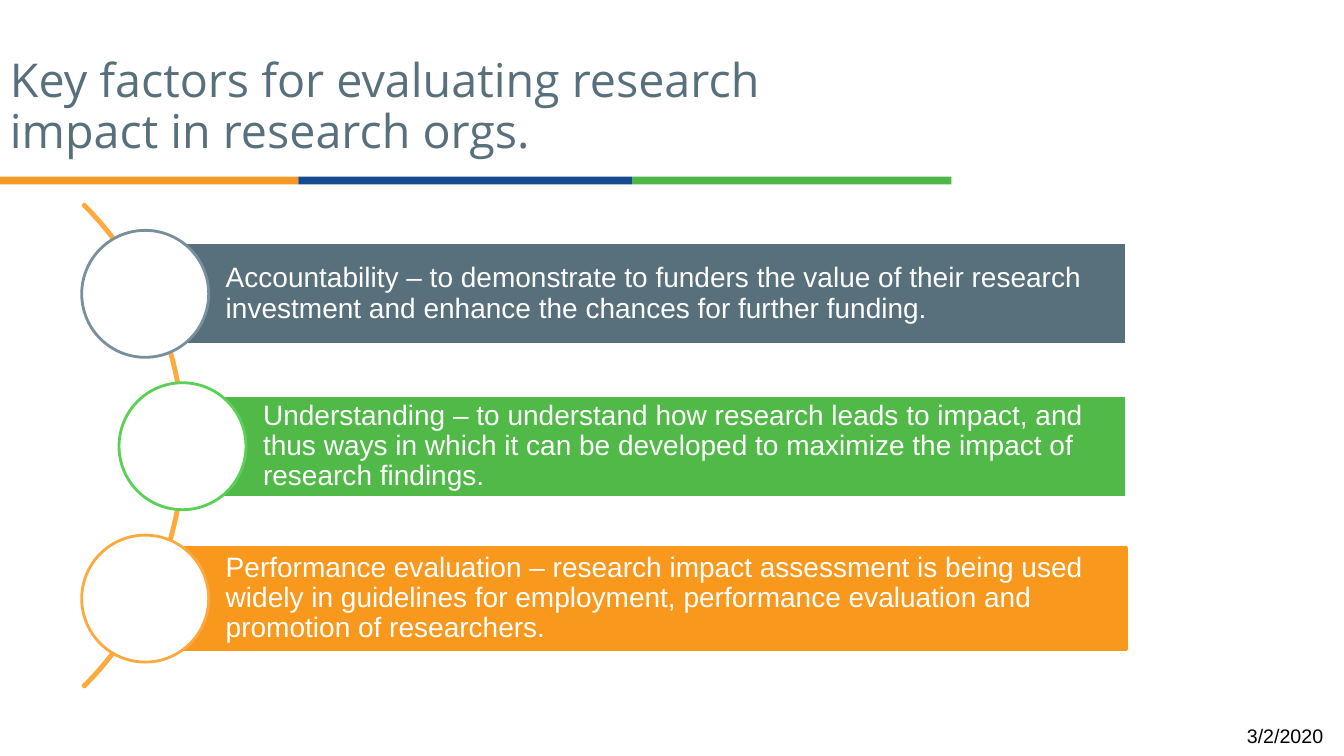
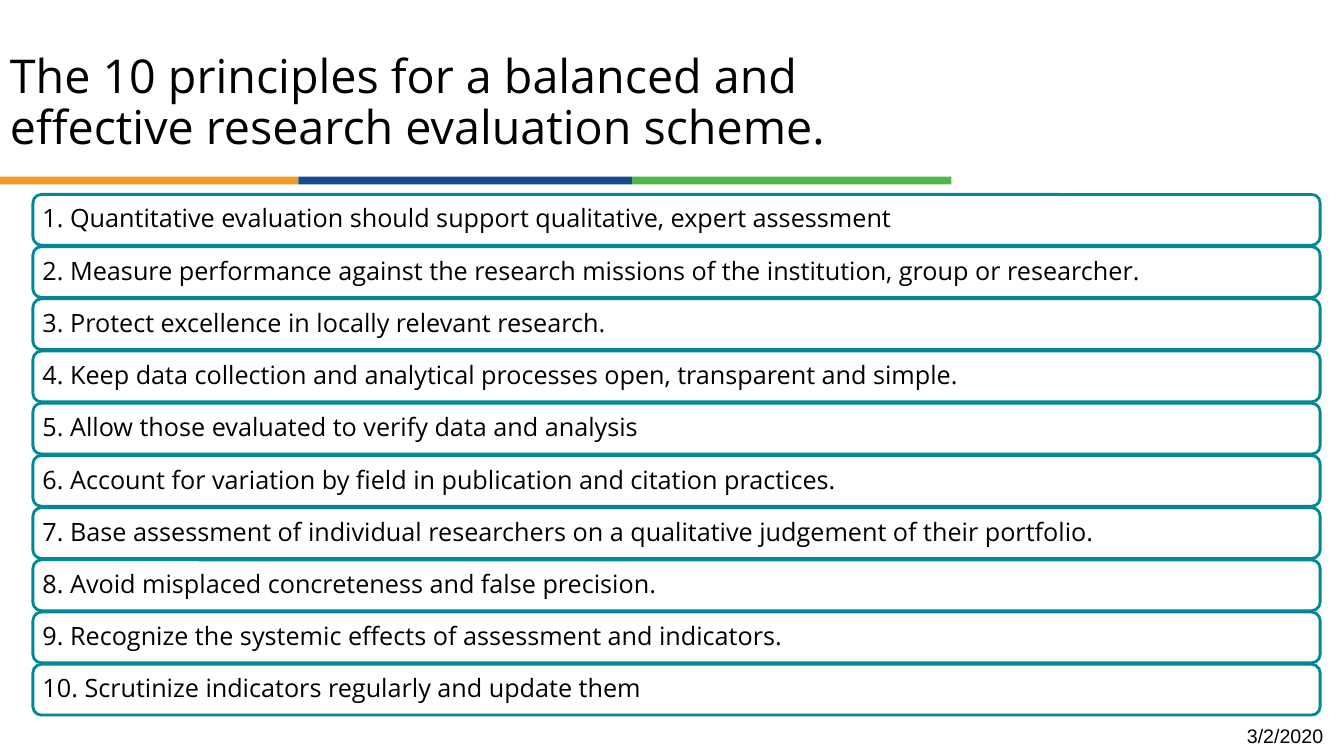
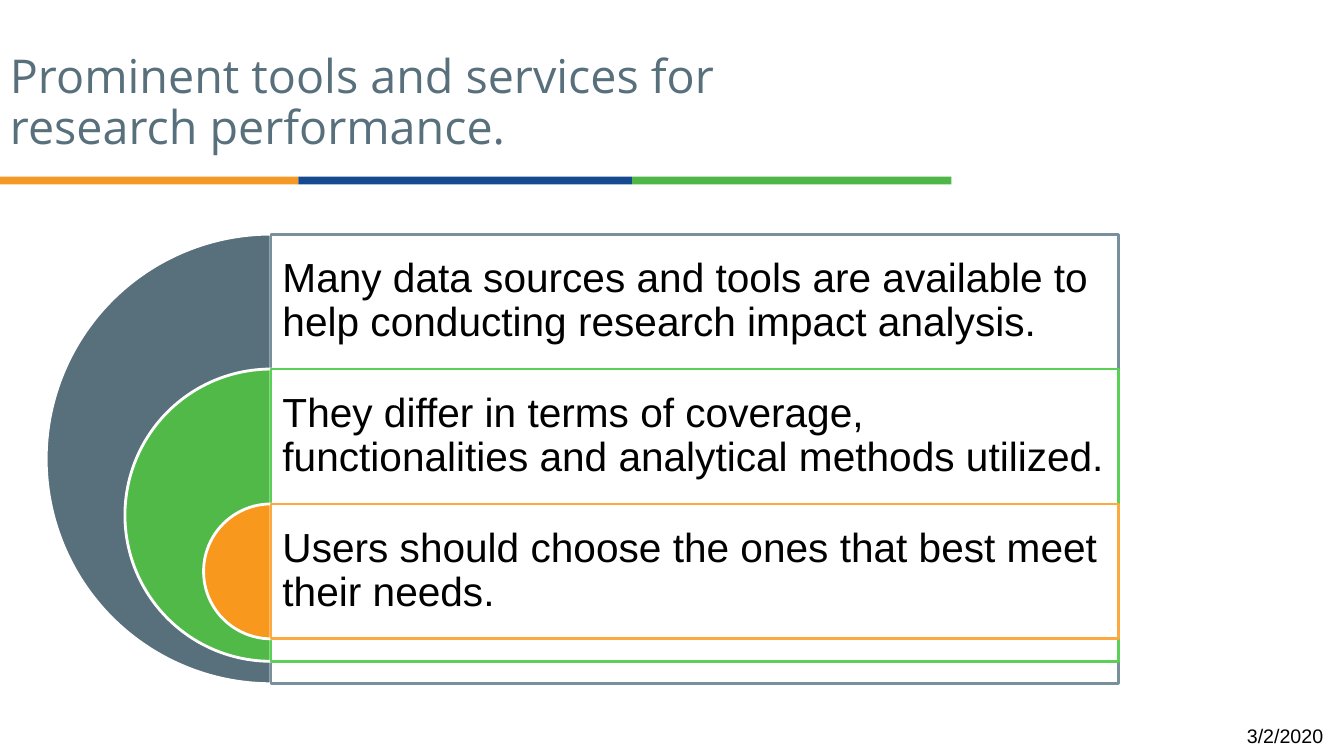
from lxml import etree
from pptx import Presentation
from pptx.dml.color import RGBColor
from pptx.enum.shapes import MSO_SHAPE
from pptx.enum.text import MSO_ANCHOR, PP_ALIGN
from pptx.oxml.ns import qn
from pptx.util import Cm, Pt

RECT, ROUND = MSO_SHAPE.RECTANGLE, MSO_SHAPE.ROUNDED_RECTANGLE
OVAL, ARC, PIE = MSO_SHAPE.OVAL, MSO_SHAPE.BLOCK_ARC, MSO_SHAPE.PIE
TOP, MID = MSO_ANCHOR.TOP, MSO_ANCHOR.MIDDLE
LEFT, RIGHT = PP_ALIGN.LEFT, PP_ALIGN.RIGHT

# Shared colours and fonts
WHITE, BLACK, TEAL = "FFFFFF", "000000", "008896"
SLATE, GREEN, AMBER = "586F7C", "51B948", "F8981D"
FILLS = (SLATE, GREEN, AMBER)
EDGES = ("78909C", "5AD156", "FEA93F")
HEAD, BODY = "Open Sans", "Arial"

# Shared colour band: left, right, colour
BANDS = ((0, 7.52, "F49925"), (7.52, 15.93, "154A90"), (15.93, 23.98, "4EB748"))

FACTORS = (
    "Accountability – to demonstrate to funders the value of their research "
    "investment and enhance the chances for further funding.",
    "Understanding – to understand how research leads to impact, and thus ways "
    "in which it can be developed to maximize the impact of research findings.",
    "Performance evaluation – research impact assessment is being used widely in "
    "guidelines for employment, performance evaluation and promotion of researchers.",
)
RULES = (
    "Quantitative evaluation should support qualitative, expert assessment",
    "Measure performance against the research missions of the institution, "
    "group or researcher.",
    "Protect excellence in locally relevant research.",
    "Keep data collection and analytical processes open, transparent and simple.",
    "Allow those evaluated to verify data and analysis",
    "Account for variation by field in publication and citation practices.",
    "Base assessment of individual researchers on a qualitative judgement of "
    "their portfolio.",
    "Avoid misplaced concreteness and false precision.",
    "Recognize the systemic effects of assessment and indicators.",
    "Scrutinize indicators regularly and update them",
)
TOOLS = (
    "Many data sources and tools are available to help conducting research "
    "impact analysis.",
    "They differ in terms of coverage, functionalities and analytical methods "
    "utilized.",
    "Users should choose the ones that best meet their needs.",
)


def rgb(code):
    return RGBColor.from_string(code)


def box(x, y, w, h):
    return Cm(x), Cm(y), Cm(w), Cm(h)


def write(shape, text, size=20, font=BODY, color=BLACK, align=LEFT,
          anchor=MID, space=0.9, pad=(0.25, 0.13, 0.25, 0.13)):
    """Fill a shape with one paragraph; pad is left, top, right, bottom."""
    frame = shape.text_frame
    frame.word_wrap = True
    frame.vertical_anchor = anchor
    (frame.margin_left, frame.margin_top,
     frame.margin_right, frame.margin_bottom) = map(Cm, pad)
    para = frame.paragraphs[0]
    para.alignment = align
    para.line_spacing = space
    run = para.add_run()
    run.text = text
    run.font.size = Pt(size)
    run.font.name = font
    run.font.color.rgb = rgb(color)


def draw(slide, kind, place, fill=None, line=None, adj=(), alpha=None):
    shape = slide.shapes.add_shape(kind, *box(*place))
    shape.shadow.inherit = False
    for i, value in enumerate(adj):
        shape.adjustments[i] = value
    if fill:
        shape.fill.solid()
        shape.fill.fore_color.rgb = rgb(fill)
    else:
        shape.fill.background()
    if alpha:
        tint = shape.element.spPr.find(".//" + qn("a:srgbClr"))
        etree.SubElement(tint, qn("a:alpha"), val=str(alpha * 1000))
    if line:
        shape.line.color.rgb = rgb(line)
        shape.line.width = Pt(2)
    else:
        shape.line.fill.background()
    return shape


def start(deck, title, width, color=SLATE, anchor=TOP):
    """Add a slide with the shared bands, title and date."""
    slide = deck.slides.add_slide(deck.slide_layouts[6])
    for left, right, fill in BANDS:
        draw(slide, RECT, (left, 4.45, right - left, 0.2), fill)
    head = slide.shapes.add_textbox(*box(0, 1.22, width, 3))
    write(head, title, size=33.3, font=HEAD, color=color, anchor=anchor)
    date = slide.shapes.add_textbox(*box(25.98, 18.03, 7.62, 1.02))
    write(date, "3/2/2020", size=14, align=RIGHT, space=1)
    return slide


def factors(deck):
    slide = start(deck, "Key factors for evaluating research impact in "
                  "research orgs.", 22.83, anchor=MID)
    draw(slide, ARC, (-12.57, 2.62, 17.22, 17.22), line="FFAA3F",
         adj=(189, 27, 0.003))
    # Each circle is centred on the left end of its bar
    high, disc, end = 2.57, 3.2, 28.4
    lefts, rims = (3.66, 4.6, 3.66), (WHITE, WHITE, AMBER)
    for i, (text, left) in enumerate(zip(FACTORS, lefts)):
        top = 6.12 + 3.84 * i
        bar = draw(slide, RECT, (left, top, end - left, high), FILLS[i], rims[i])
        write(bar, text, color=WHITE, pad=(2.03, 0.15, 0.15, 0.15))
        draw(slide, OVAL, (left - disc / 2, top + (high - disc) / 2, disc, disc),
             WHITE, EDGES[i])


def rules(deck):
    slide = start(deck, "The 10 principles for a balanced and effective "
                  "research evaluation scheme.", 21.92, color=BLACK)
    first, last = 4.9, 16.74
    step = (last - first) / (len(RULES) - 1)
    for i, text in enumerate(RULES):
        row = draw(slide, ROUND, (0.83, first + step * i, 32.44, 1.28),
                   WHITE, TEAL, adj=(0.167,))
        write(row, f"{i + 1}. {text}", size=18, font=HEAD, pad=(0.18,) * 4)


def tools(deck):
    slide = start(deck, "Prominent tools and services for research "
                  "performance.", 22.68)
    # Nested half discs share one centre line, where the panels begin
    axis, full, pad = 6.83, 11.33, 0.29
    step = 0.3 * full
    for i, text in enumerate(TOOLS):
        size, top = full * (1 - 0.35 * i), 5.9 + step * i
        draw(slide, PIE, (axis - size / 2, top, size, size), FILLS[i], WHITE,
             adj=(54, 162))
        panel = draw(slide, RECT, (axis, top, 21.36, size), WHITE, EDGES[i],
                     alpha=90)
        write(panel, text, size=29, pad=(pad, pad, pad, size - step + pad))


def main():
    deck = Presentation()
    deck.slide_width, deck.slide_height = Cm(33.87), Cm(19.05)
    factors(deck)
    rules(deck)
    tools(deck)
    deck.save("out.pptx")


if __name__ == "__main__":
    main()
